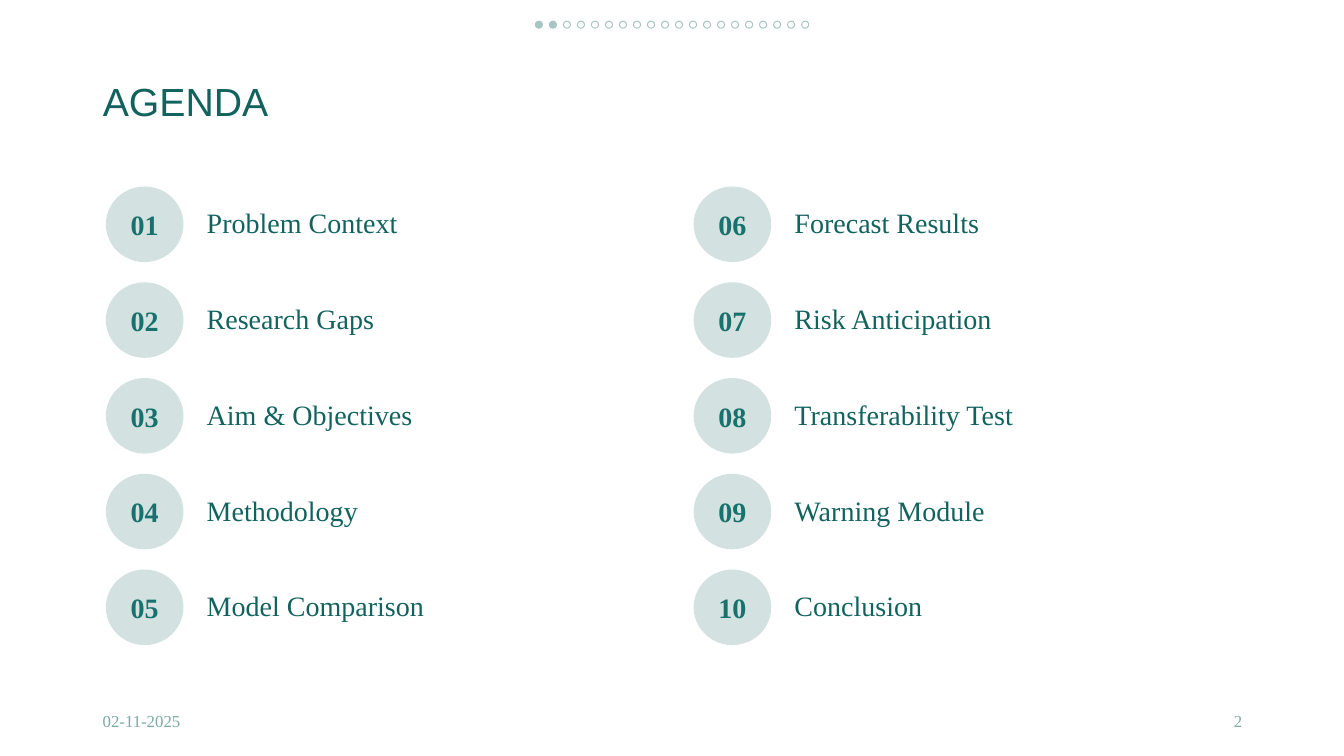
from pptx import Presentation
from pptx.dml.color import RGBColor
from pptx.enum.shapes import MSO_SHAPE
from pptx.enum.text import MSO_ANCHOR, PP_ALIGN
from pptx.util import Inches, Pt

DARK_TEAL = RGBColor(0x12, 0x62, 0x5E)
TEAL = RGBColor(0x17, 0x72, 0x6D)
MUTED_TEAL = RGBColor(0x7C, 0xA9, 0xA5)
DOT_TEAL = RGBColor(0xA7, 0xC5, 0xC2)
PALE_TEAL = RGBColor(0xD3, 0xE2, 0xE0)
WHITE = RGBColor(0xFF, 0xFF, 0xFF)
SERIF = "Times New Roman"

SLIDE_WIDTH, SLIDE_HEIGHT = 13.33, 7.5
LEFT_MARGIN = 0.92
CONTENT_WIDTH = 11.5
AGENDA_TOP = 1.75
ROW_HEIGHT = 0.95
BADGE_COLUMN_WIDTH = 1.03
BADGE_WIDTH, BADGE_HEIGHT = 0.77, 0.75
DOT_COUNT, DOTS_FILLED = 20, 2
DOT_SIZE, DOT_PITCH = 0.07, 0.139

AGENDA_COLUMNS = [
    (LEFT_MARGIN, 5.67, 1, ["Problem Context", "Research Gaps", "Aim & Objectives",
                            "Methodology", "Model Comparison"]),
    (6.75, 5.77, 6, ["Forecast Results", "Risk Anticipation", "Transferability Test",
                     "Warning Module", "Conclusion"]),
]


def write_text(text_frame, text, size=20, font=SERIF, color=DARK_TEAL, bold=False,
               align=PP_ALIGN.LEFT, line_spacing=1.0):
    """Write one formatted paragraph into a text frame."""
    paragraph = text_frame.paragraphs[0]
    paragraph.alignment = align
    paragraph.line_spacing = line_spacing
    run = paragraph.add_run()
    run.text = text
    run.font.size = Pt(size)
    run.font.name = font
    run.font.bold = bold
    run.font.color.rgb = color


def add_title(slide, text):
    """Place and format the title placeholder."""
    title = slide.shapes.title
    title.left, title.top = Inches(LEFT_MARGIN), Inches(0.04 * SLIDE_HEIGHT)
    title.width, title.height = Inches(CONTENT_WIDTH), Inches(1.45)
    title.text_frame.vertical_anchor = MSO_ANCHOR.MIDDLE
    write_text(title.text_frame, text, size=28, font="Arial", line_spacing=0.9)


def add_circle(shapes, left, top, width, height, fill):
    """Add a filled ellipse without outline or shadow."""
    circle = shapes.add_shape(MSO_SHAPE.OVAL, Inches(left), Inches(top),
                              Inches(width), Inches(height))
    circle.shadow.inherit = False
    circle.fill.solid()
    circle.fill.fore_color.rgb = fill
    circle.line.fill.background()
    return circle


def add_agenda_table(slide, left, width, topics):
    """Add a clear table with an empty badge column and a topic column."""
    table = slide.shapes.add_table(len(topics), 2, Inches(left), Inches(AGENDA_TOP),
                                   Inches(width), Inches(ROW_HEIGHT * len(topics))).table
    table.first_row = False
    table.horz_banding = False
    table.columns[0].width = Inches(BADGE_COLUMN_WIDTH)
    table.columns[1].width = Inches(width - BADGE_COLUMN_WIDTH)
    for row, topic in enumerate(topics):
        for column in range(2):
            table.cell(row, column).fill.background()
        topic_cell = table.cell(row, 1)
        topic_cell.vertical_anchor = MSO_ANCHOR.MIDDLE
        write_text(topic_cell.text_frame, topic)


def add_badges(slide, left, first_number, count):
    """Add numbered circles centred in the badge column, one per row."""
    badge_left = left + (BADGE_COLUMN_WIDTH - BADGE_WIDTH) / 2
    badge_top = AGENDA_TOP + (ROW_HEIGHT - BADGE_HEIGHT) / 2
    for row in range(count):
        badge = add_circle(slide.shapes, badge_left, badge_top + row * ROW_HEIGHT,
                           BADGE_WIDTH, BADGE_HEIGHT, PALE_TEAL)
        frame = badge.text_frame
        frame.margin_left = frame.margin_right = 0
        frame.vertical_anchor = MSO_ANCHOR.MIDDLE
        write_text(frame, f"{first_number + row:02d}", color=TEAL, bold=True,
                   align=PP_ALIGN.CENTER)


def add_progress_dots(slide):
    """Add the grouped row of progress dots at the top."""
    group = slide.shapes.add_group_shape()
    for index in range(DOT_COUNT):
        fill = DOT_TEAL if index < DOTS_FILLED else WHITE
        dot = add_circle(group.shapes, 5.31 + index * DOT_PITCH, 0.21,
                         DOT_SIZE, DOT_SIZE, fill)
        dot.line.color.rgb = DOT_TEAL
        dot.line.width = Pt(0.71)


def add_footer(slide, text, left, width, align):
    """Add a small muted text at the bottom."""
    box = slide.shapes.add_textbox(Inches(left), Inches(6.95), Inches(width), Inches(0.4))
    box.text_frame.word_wrap = True
    box.text_frame.vertical_anchor = MSO_ANCHOR.MIDDLE
    write_text(box.text_frame, text, size=12, color=MUTED_TEAL, align=align)


def main():
    """Build the agenda slide and save it."""
    presentation = Presentation()
    presentation.slide_width = Inches(SLIDE_WIDTH)
    presentation.slide_height = Inches(SLIDE_HEIGHT)
    slide = presentation.slides.add_slide(presentation.slide_layouts[5])
    add_title(slide, "AGENDA")
    for left, width, first_number, topics in AGENDA_COLUMNS:
        add_agenda_table(slide, left, width, topics)
        add_badges(slide, left, first_number, len(topics))
    add_progress_dots(slide)
    add_footer(slide, "02-11-2025", LEFT_MARGIN, 1.24, PP_ALIGN.LEFT)
    add_footer(slide, "2", LEFT_MARGIN + CONTENT_WIDTH - 0.82, 0.82, PP_ALIGN.RIGHT)
    presentation.save("out.pptx")


if __name__ == "__main__":
    main()
